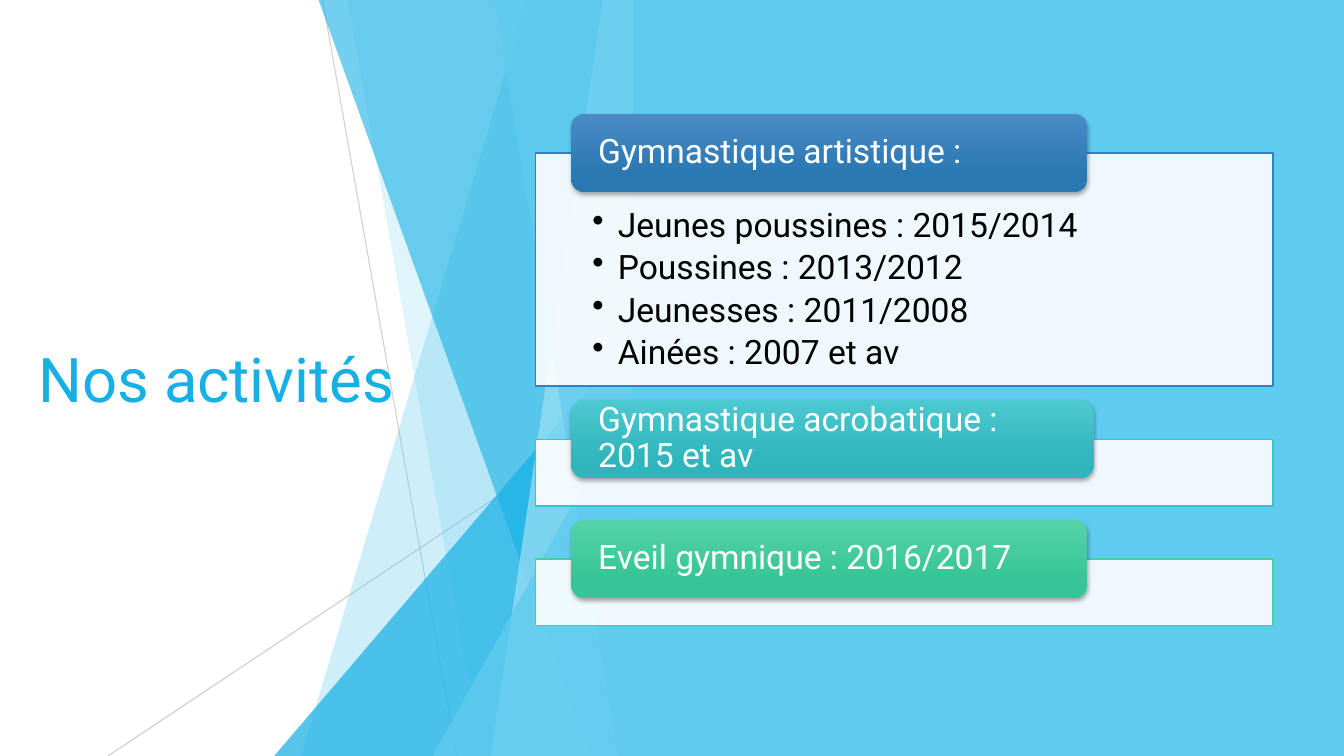
from lxml import etree
from pptx import Presentation
from pptx.enum import shapes, text
from pptx.oxml import ns
from pptx.util import Cm, Pt
from pptx.dml.color import RGBColor

TITLE = "Nos activités"
# heading, tab width, panel height, panel line, tab gradient, bullet items
ACTIVITIES = [
    ("Gymnastique artistique :", 13.0, 5.87, "blue", ("blue_top", "blue_end"),
     ["Jeunes poussines : 2015/2014", "Poussines : 2013/2012",
      "Jeunesses : 2011/2008", "Ainées : 2007 et av"]),
    ("Gymnastique acrobatique : 2015 et av", 13.16, 1.68, "teal",
     ("teal_top", "teal_end"), []),
    ("Eveil gymnique : 2016/2017", 13.0, 1.68, "green",
     ("green_top", "green_end"), []),
]
COLORS = {
    "white": "FFFFFF", "black": "000000", "gray": "BFBFBF",
    "sky": "5FCBEF", "azure": "17B0E4", "pale": "9FE0F5",
    "blue": "2E83C3", "blue_top": "4A8BC6", "blue_end": "2A78B2",
    "teal": "34C6CE", "teal_top": "4DC8D0", "teal_end": "2FB5BC",
    "green": "42D0A2", "green_top": "56D2A7", "green_end": "36C596",
}
FONT = "Roboto"
WIDTH, HEIGHT = 33.87, 19.05
SPLIT = 15.95  # right edge of the facets, left edge of the blue half
# top x, top y, bottom x, colour, opacity %; all reach SPLIT and the bottom
FACETS = [
    (13.28, 0, 7.59, "sky", 30), (8.76, 0, 12.14, "sky", 20),
    (SPLIT, 8.46, 6.91, "azure", 72), (8.03, 0, 14.88, "azure", 60),
    (15.19, 0, 12.37, "pale", 70), (12.47, 0, 15.57, "sky", 65),
    (SPLIT, 9.98, 10.9, "sky", 80),
]
# start x, start y, end x, opacity %; both end at the bottom
RAYS = [(8.13, 0, 11.51, 75), (SPLIT, 10.24, 2.72, 80)]
PANEL_X, PANEL_W, FIRST_PANEL_Y, PANEL_GAP = 13.49, 18.59, 3.86, 1.34
TAB_X, TAB_H, TAB_RISE = 14.4, 1.96, 0.99


def rgb(name):
    return RGBColor.from_string(COLORS[name])


def set_alpha(fill, percent):
    """Make a solid fill partly transparent."""
    color = fill._xPr.find(".//" + ns.qn("a:srgbClr"))
    etree.SubElement(color, ns.qn("a:alpha"), val=str(percent * 1000))


def paint(sp, color, opacity=100, line=None):
    sp.shadow.inherit = False
    sp.fill.solid()
    sp.fill.fore_color.rgb = rgb(color)
    set_alpha(sp.fill, opacity)
    if line:
        sp.line.color.rgb = rgb(line)
        sp.line.width = Pt(1)
    else:
        sp.line.fill.background()


def add_box(s, kind, x, y, w, h):
    return s.shapes.add_shape(kind, Cm(x), Cm(y), Cm(w), Cm(h))


def write(sp, lines, size, color, anchor, insets, spacing=None, after=0):
    tf = sp.text_frame
    tf.word_wrap = True
    tf.vertical_anchor = anchor
    tf.margin_left, tf.margin_top, tf.margin_right, tf.margin_bottom = map(Cm, insets)
    tf.text = "\n".join(lines)
    for p in tf.paragraphs:
        p.alignment = text.PP_ALIGN.LEFT
        p.line_spacing = spacing
        p.space_after = Pt(after)
        font = p.runs[0].font
        font.name, font.size = FONT, Pt(size)
        font.color.rgb = rgb(color)


def add_bullets(sp):
    for p in sp.text_frame.paragraphs:
        pPr = p._p.get_or_add_pPr()
        pPr.set("marL", str(Cm(0.64)))
        pPr.set("indent", str(-Cm(0.64)))
        etree.SubElement(pPr, ns.qn("a:buChar"), char="•")


def add_ray(s, x1, y1, x2, opacity):
    ray = s.shapes.add_connector(shapes.MSO_CONNECTOR.STRAIGHT,
                                 Cm(x1), Cm(y1), Cm(x2), Cm(HEIGHT))
    ray.line.color.rgb = rgb("gray")
    ray.line.width = Pt(0.75)
    set_alpha(ray.line.fill, opacity)
    etree.SubElement(ray._element.spPr, ns.qn("a:effectLst"))


def add_facet(s, top_x, top_y, bottom_x, color, opacity):
    outline = s.shapes.build_freeform(Cm(top_x), Cm(top_y))
    corners = [(SPLIT, top_y), (SPLIT, HEIGHT), (bottom_x, HEIGHT)]
    outline.add_line_segments([(Cm(x), Cm(y)) for x, y in corners], close=True)
    paint(outline.convert_to_shape(), color, opacity)


def add_tab(s, y, w, heading, gradient):
    tab = add_box(s, shapes.MSO_SHAPE.ROUNDED_RECTANGLE, TAB_X, y, w, TAB_H)
    tab.line.fill.background()
    tab.fill.gradient()
    tab.fill.gradient_angle = 270
    for stop, color, position in zip(tab.fill.gradient_stops, gradient, (0, 0.78)):
        stop.color.rgb = rgb(color)
        stop.position = position
    # Soft shadow below the tab
    tab.shadow.inherit = False
    effects = tab._element.spPr.find(ns.qn("a:effectLst"))
    shadow = etree.SubElement(effects, ns.qn("a:outerShdw"), blurRad=str(Pt(3)),
                              dist=str(Pt(2)), dir="5400000", rotWithShape="0")
    color = etree.SubElement(shadow, ns.qn("a:srgbClr"), val=COLORS["black"])
    etree.SubElement(color, ns.qn("a:alpha"), val="35000")
    write(tab, [heading], 24, "white", text.MSO_ANCHOR.MIDDLE,
          (0.58, 0, 0.58, 0), spacing=0.9)


def main():
    prs = Presentation()
    prs.slide_width, prs.slide_height = Cm(WIDTH), Cm(HEIGHT)
    s = prs.slides.add_slide(prs.slide_layouts[5])

    # Faceted backdrop
    for ray in RAYS:
        add_ray(s, *ray)
    for facet in FACETS:
        add_facet(s, *facet)

    # Title, in front of the facets
    title = s.shapes.title
    s.shapes._spTree.append(title._element)
    title.left, title.top, title.width, title.height = map(Cm, (0.71, 3.84, 9.86, 11.38))
    write(title, [TITLE], 44, "azure", text.MSO_ANCHOR.MIDDLE, (0.25, 0.13, 0.25, 0.13))

    # Blue half
    half = add_box(s, shapes.MSO_SHAPE.RECTANGLE, SPLIT, 0, WIDTH - SPLIT, HEIGHT)
    paint(half, "sky")

    # Activity panels, stacked with an equal gap
    y = FIRST_PANEL_Y
    for heading, tab_w, panel_h, line, gradient, items in ACTIVITIES:
        panel = add_box(s, shapes.MSO_SHAPE.RECTANGLE, PANEL_X, y, PANEL_W, panel_h)
        paint(panel, "white", 90, line)
        if items:
            write(panel, items, 24, "black", text.MSO_ANCHOR.TOP,
                  (1.44, 1.4, 1.44, 0.48), spacing=0.9, after=4.2)
            add_bullets(panel)
        add_tab(s, y - TAB_RISE, tab_w, heading, gradient)
        y += panel_h + PANEL_GAP

    prs.save("out.pptx")


if __name__ == "__main__":
    main()
